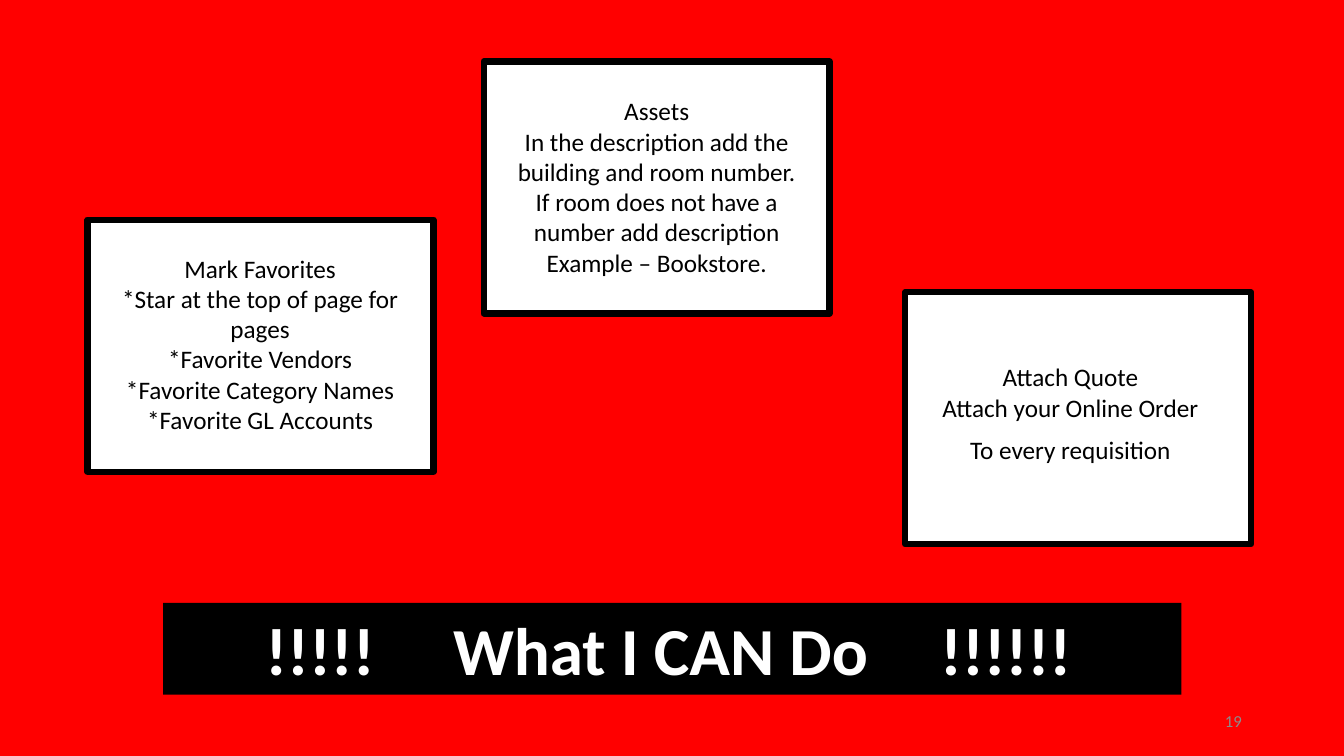
from pptx import Presentation
from pptx.dml.color import RGBColor
from pptx.enum.shapes import MSO_SHAPE as Shape
from pptx.enum.text import MSO_ANCHOR as Anchor, MSO_AUTO_SIZE as AutoSize, PP_ALIGN as Align
from pptx.oxml.ns import qn
from pptx.util import Pt
from lxml import etree

FONT = "Calibri"
RED, BLACK, WHITE, GREY = "FF0000", "000000", "FFFFFF", "8C8C8C"
CARD_WIDTH, CARD_HEIGHT = 247, 180

# Card left and top, text box (left, top, width, height), lines
CARDS = [
    (345.6, 43.9, (362.2, 64.8, 213.8, 138.2), [
        "Assets",
        "In the description add the building and room number. "
        "If room does not have a number add description",
        "Example – Bookstore."]),
    (62.6, 157, (74.9, 177.1, 221.8, 138.2), [
        "Mark Favorites",
        "*Star at the top of page for pages",
        "*Favorite Vendors",
        "*Favorite Category Names",
        "*Favorite GL Accounts"]),
    (646.6, 208.8, (645.1, 254.9, 239, 82.1), [
        "Attach Quote",
        "Attach your Online Order",
        "To every requisition"]),
]
SPACED_LINE = "To every requisition"


def set_fill(fill, color):
    fill.solid()
    fill.fore_color.rgb = RGBColor.from_string(color)


def add_run(paragraph, text, size, color, bold=False):
    run = paragraph.add_run()
    run.text = text
    font = run.font
    font.name, font.size, font.bold = FONT, Pt(size), bold
    font.color.rgb = RGBColor.from_string(color)


def add_text(slide, box, lines, size, color, align=Align.CENTER, anchor=Anchor.TOP):
    frame = slide.shapes.add_textbox(*map(Pt, box)).text_frame
    frame.word_wrap = True
    frame.vertical_anchor = anchor
    for index, line in enumerate(lines):
        paragraph = frame.add_paragraph() if index else frame.paragraphs[0]
        paragraph.alignment = align
        if line == SPACED_LINE:
            paragraph.space_before = Pt(8.5)
        add_run(paragraph, line, size, color)


def add_card(slide, left, top, text_box, lines):
    card = slide.shapes.add_shape(
        Shape.RECTANGLE, Pt(left), Pt(top), Pt(CARD_WIDTH), Pt(CARD_HEIGHT))
    card.shadow.inherit = False
    set_fill(card.fill, WHITE)
    set_fill(card.line.fill, BLACK)
    card.line.width = Pt(4.5)
    add_text(slide, text_box, lines, 18, BLACK)


def add_tab_stops(paragraph, positions):
    properties = paragraph._p.get_or_add_pPr()
    tabs = etree.SubElement(properties, qn("a:tabLst"))
    for position in positions:
        etree.SubElement(tabs, qn("a:tab"), pos=str(Pt(position)), algn="l")


def format_title(title):
    title.left, title.top, title.width, title.height = map(Pt, (116.6, 430.6, 727.2, 65.5))
    set_fill(title.fill, BLACK)
    frame = title.text_frame
    frame.auto_size = AutoSize.NONE
    frame.word_wrap = True
    frame.vertical_anchor = Anchor.TOP
    frame.margin_left = Pt(73)
    paragraph = frame.paragraphs[0]
    paragraph.alignment = Align.LEFT
    # Tab stops separate the exclamation marks from the words
    add_tab_stops(paragraph, (134, 482))
    add_run(paragraph, "!!!!!\tWhat I CAN Do\t!!!!!!", 48, WHITE, bold=True)


def main():
    presentation = Presentation()
    presentation.slide_width, presentation.slide_height = Pt(960), Pt(540)
    slide = presentation.slides.add_slide(presentation.slide_layouts[5])
    set_fill(slide.background.fill, RED)

    # Banner and slide number
    format_title(slide.shapes.title)
    add_text(slide, (678.2, 500.4, 216, 28.8), ["19"], 12, GREY, Align.RIGHT, Anchor.MIDDLE)

    # Cards
    for card in CARDS:
        add_card(slide, *card)

    presentation.save("out.pptx")


if __name__ == "__main__":
    main()
